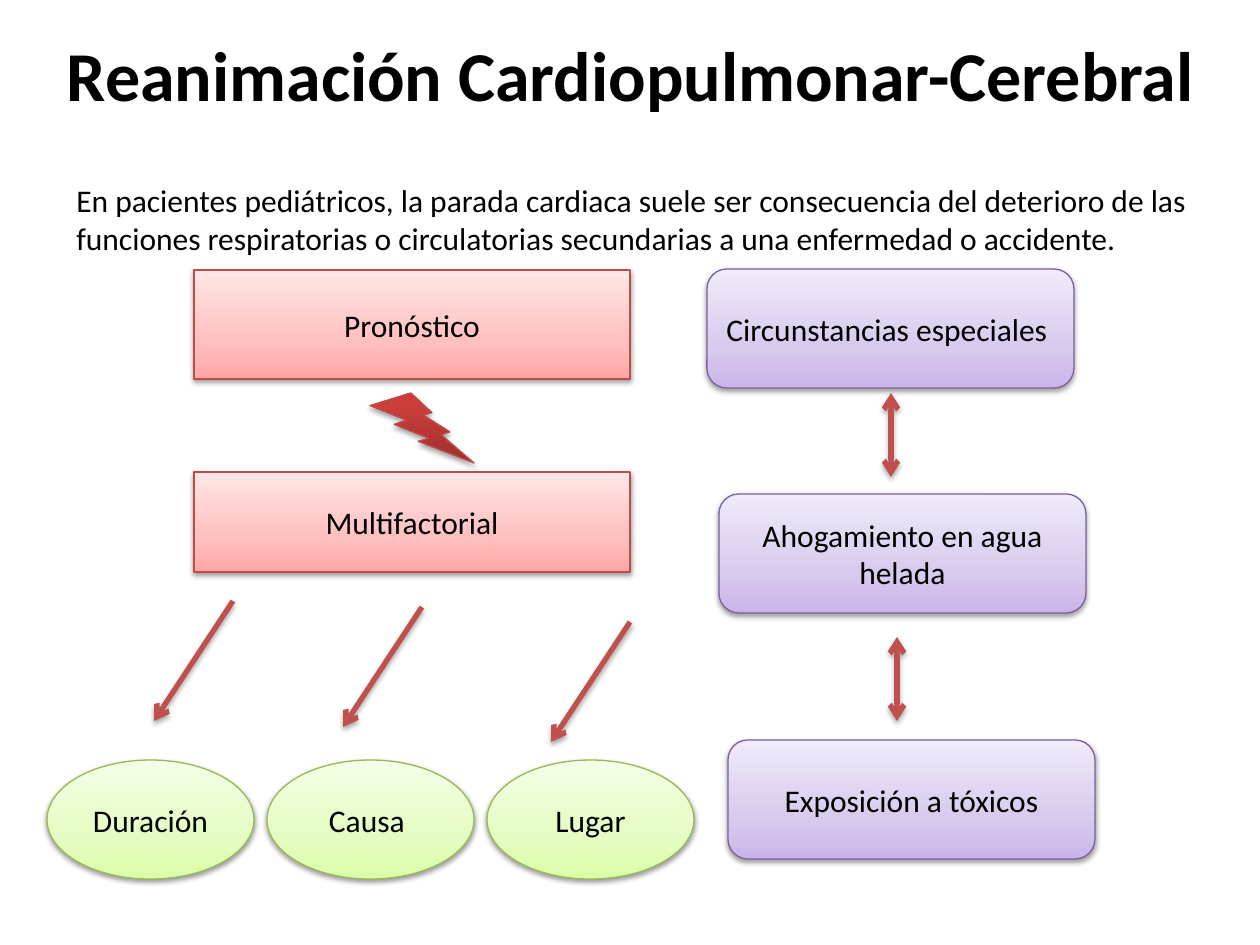
from dataclasses import dataclass

from lxml import etree
from pptx import Presentation
from pptx.dml.color import RGBColor
from pptx.enum import shapes, text
from pptx.oxml import ns
from pptx.util import Pt

PX = 914400 / 126
FONT = "Calibri"
INK = "000000"
ARROW_COLOR = "C0504D"
KIND = shapes.MSO_SHAPE


@dataclass
class Style:
    kind: int
    stops: tuple  # (percent, colour), from the bottom upwards
    border: str
    shadow_alpha: int = 38
    shadow_distance: float = 1.6


@dataclass
class Node:
    style: Style
    left: int
    top: int
    width: int
    height: int
    label: str = ""


@dataclass
class Arrow:
    x1: int
    y1: int
    x2: int
    y2: int
    double: bool = False


PINK = Style(KIND.RECTANGLE, ((0, "FFA6A5"), (35, "FFC0BF"), (100, "FFE7E7")), "BF4C48")
GREEN = Style(KIND.OVAL, ((0, "DAFDA7"), (35, "E4FCC2"), (100, "F5FFE7")), "98B955")
PURPLE = Style(KIND.ROUNDED_RECTANGLE,
               ((0, "C9B5E8"), (35, "D8CBEE"), (100, "F0EAF9")), "7D60A0")
RED = Style(KIND.LIGHTNING_BOLT, ((0, "9C2F2D"), (80, "CB3E3A"), (100, "CE3B37")),
            "BF4C48", 35, 1.8)


def px(length: int) -> int:
    return round(length * PX)


def color(value: str) -> RGBColor:
    return RGBColor.from_string(value)


def add_element(parent, tag: str, **attributes):
    element = etree.SubElement(parent, ns.qn(tag))
    for name, value in attributes.items():
        element.set(name, str(value))
    return element


def add_color(parent, value: str):
    return add_element(parent, "a:srgbClr", val=value)


def add_shadow(properties, alpha: int, distance: float) -> None:
    effects = properties.find(ns.qn("a:effectLst"))
    if effects is None:
        effects = add_element(properties, "a:effectLst")
    shadow = add_element(effects, "a:outerShdw", blurRad=Pt(3.1), dist=Pt(distance),
                         dir=5400000, rotWithShape=0)
    add_element(add_color(shadow, INK), "a:alpha", val=alpha * 1000)


def write(frame, content: str, size: int, align, bold: bool = False) -> None:
    para = frame.paragraphs[0]
    para.text = content
    para.alignment = align
    para.font.name = FONT
    para.font.size = Pt(size)
    para.font.bold = bold
    para.font.color.rgb = color(INK)


def add_text(page, left: int, top: int, width: int, height: int, content: str,
             size: int, align, bold: bool = False, wrap: bool = True) -> None:
    box = page.shapes.add_textbox(px(left), px(top), px(width), px(height))
    box.text_frame.word_wrap = wrap
    write(box.text_frame, content, size, align, bold)


def add_node(page, node: Node) -> None:
    style = node.style
    box = page.shapes.add_shape(style.kind, px(node.left), px(node.top),
                                px(node.width), px(node.height))
    box.fill.gradient()
    box.fill.gradient_angle = 90
    stop_list = box._element.spPr.find(".//" + ns.qn("a:gsLst"))
    for stop in list(stop_list):
        stop_list.remove(stop)
    for percent, value in style.stops:
        add_color(add_element(stop_list, "a:gs", pos=percent * 1000), value)
    box.line.color.rgb = color(style.border)
    box.line.width = Pt(0.75)
    box.shadow.inherit = False
    add_shadow(box._element.spPr, style.shadow_alpha, style.shadow_distance)
    if node.label:
        box.text_frame.word_wrap = True
        box.text_frame.vertical_anchor = text.MSO_ANCHOR.MIDDLE
        write(box.text_frame, node.label, 18, text.PP_ALIGN.CENTER)


def add_arrow(page, arrow: Arrow) -> None:
    connector = page.shapes.add_connector(
        shapes.MSO_CONNECTOR.STRAIGHT,
        px(arrow.x1), px(arrow.y1), px(arrow.x2), px(arrow.y2))
    connector.line.color.rgb = color(ARROW_COLOR)
    connector.line.width = Pt(3)
    properties = connector._element.spPr
    line = properties.find(ns.qn("a:ln"))
    if arrow.double:
        add_element(line, "a:headEnd", type="arrow")
    add_element(line, "a:tailEnd", type="arrow")
    add_shadow(properties, 35, 1.8)


def main() -> None:
    deck = Presentation()
    deck.slide_width, deck.slide_height = px(1260), px(945)
    page = deck.slides.add_slide(deck.slide_layouts[6])

    # Title and introduction
    add_text(page, 47, 25, 1167, 97, "Reanimación Cardiopulmonar-Cerebral", 40,
             text.PP_ALIGN.CENTER, bold=True, wrap=False)
    add_text(page, 64, 175, 1149, 89,
             "En pacientes pediátricos, la parada cardiaca suele ser consecuencia del "
             "deterioro de las funciones respiratorias o circulatorias secundarias a "
             "una enfermedad o accidente.", 18, text.PP_ALIGN.LEFT)

    # Prognosis and its factors
    add_node(page, Node(PINK, 194, 270, 436, 109, "Pronóstico"))
    add_node(page, Node(PINK, 194, 472, 436, 100, "Multifactorial"))
    for x, y in ((233, 601), (422, 607), (630, 622)):
        add_arrow(page, Arrow(x, y, x - 79, y + 120))
    for index, label in enumerate(("Duración ", "Causa ", "Lugar")):
        add_node(page, Node(GREEN, 47 + 220 * index, 760, 207, 119, label))

    # Special circumstances
    for left, top, label in ((707, 269, "Circunstancias especiales "),
                             (719, 494, "Ahogamiento en agua helada"),
                             (728, 740, "Exposición a tóxicos")):
        add_node(page, Node(PURPLE, left, top, 367, 119, label))
    for x, top in ((891, 393), (897, 637)):
        add_arrow(page, Arrow(x, top, x, top + 84, double=True))

    # Bolt between the prognosis boxes
    add_node(page, Node(RED, 370, 393, 104, 70))

    deck.save("out.pptx")


if __name__ == "__main__":
    main()
